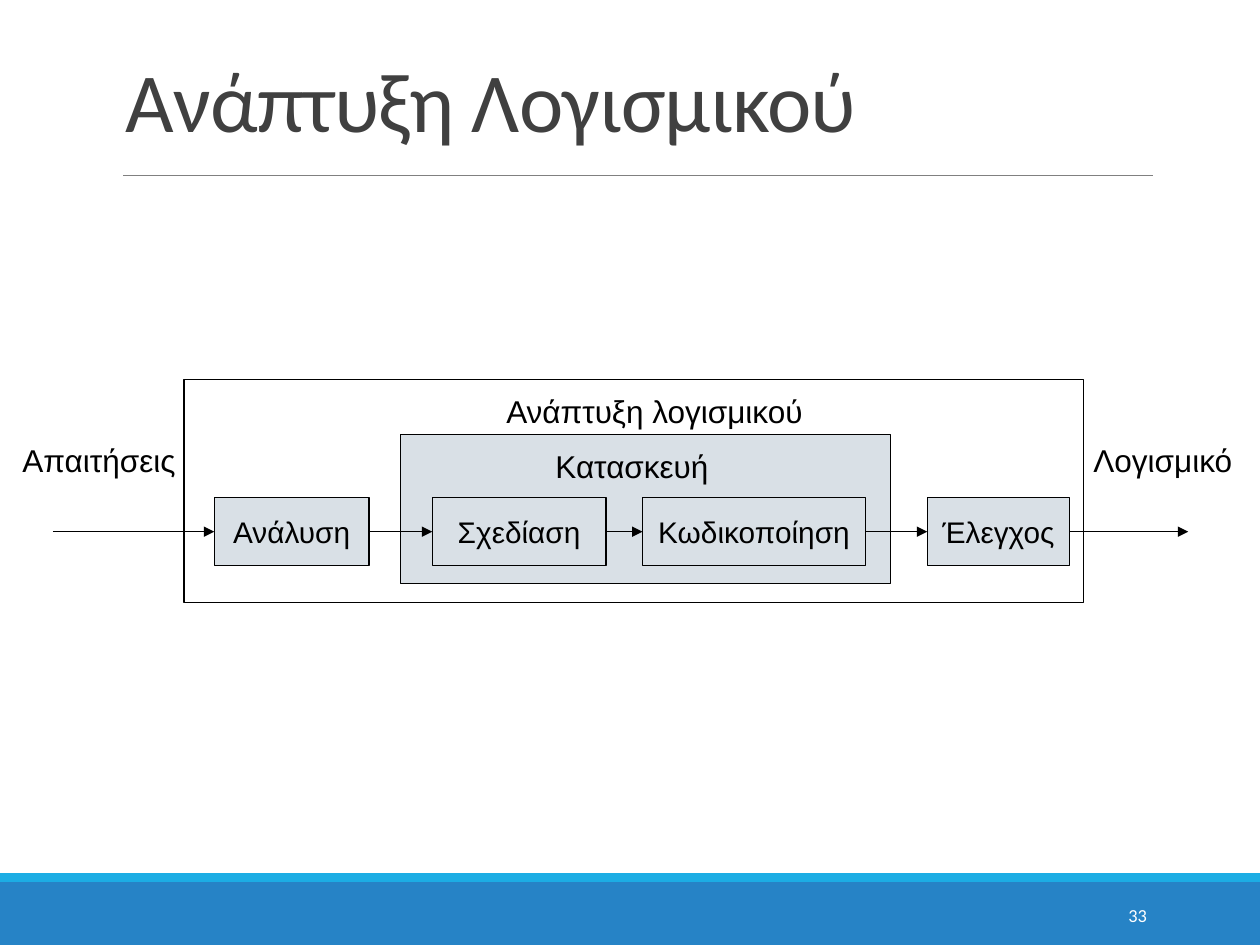
from lxml import etree
from pptx import Presentation
from pptx import util as u
from pptx.dml import color
from pptx.enum import shapes, text
from pptx.oxml import ns

HUES = {"band": "2683C6", "edge": "1CADE4", "rule": "808080", "title": "404040",
        "box": "D9E0E6", "ink": "000000", "page": "FFFFFF"}
STEPS = [("Ανάλυση", 1.7, 1.23), ("Σχεδίαση", 3.43, 1.38),
         ("Κωδικοποίηση", 5.1, 1.77), ("Έλεγχος", 7.36, 1.13)]
LABELS = [("Απαιτήσεις", 0.08, 3.45, 1.42), ("Ανάπτυξη λογισμικού", 3.92, 3.06, 2.56),
          ("Λογισμικό", 8.58, 3.45, 1.31), ("Κατασκευή", 4.31, 3.5, 1.42)]
TOP, TALL = 3.95, 0.54
MID = TOP + TALL / 2


def hue(name):
    """Return the named colour."""
    return color.RGBColor.from_string(HUES[name])


def style(item, values):
    """Set each attribute of item from values."""
    for key, value in values.items():
        setattr(item, key, value)


def write(shape, words, size, font="Arial", ink="ink", frame=None, para=None):
    """Write one formatted paragraph into a shape and return its run."""
    style(shape.text_frame, frame or {})
    line = shape.text_frame.paragraphs[0]
    style(line, para or {})
    run = line.add_run()
    run.text = words
    style(run.font, {"size": u.Pt(size), "name": font})
    run.font.color.rgb = hue(ink)
    return run


def rect(slide, place, fill=None, line=None):
    """Add a rectangle with an optional fill and outline."""
    shape = slide.shapes.add_shape(shapes.MSO_SHAPE.RECTANGLE, *map(u.Inches, place))
    shape.shadow.inherit = False
    if fill:
        shape.fill.solid()
        shape.fill.fore_color.rgb = hue(fill)
    else:
        shape.fill.background()
    if line:
        shape.line.color.rgb = hue(line)
        shape.line.width = u.Pt(0.75)
    else:
        shape.line.fill.background()
    return shape


def label(slide, place, words, size, **form):
    """Add a text box and return its run."""
    box = slide.shapes.add_textbox(*map(u.Inches, place))
    return write(box, words, size, **form)


def rule(slide, start, end, ink="ink", width=0.75):
    """Add a straight line without a shadow."""
    line = slide.shapes.add_connector(shapes.MSO_CONNECTOR.STRAIGHT,
                                      *map(u.Inches, (*start, *end)))
    line.line.color.rgb = hue(ink)
    line.line.width = u.Pt(width)
    etree.SubElement(line._element.spPr, ns.qn("a:effectLst"))
    return line


def arrow(slide, start, end, src=None, dest=None):
    """Add an arrow, joined to the boxes it leaves and meets."""
    line = rule(slide, start, end)
    etree.SubElement(line.line._get_or_add_ln(), ns.qn("a:tailEnd"), type="triangle")
    if src is not None:
        line.begin_connect(src, 3)
    if dest is not None:
        line.end_connect(dest, 1)


def frame(slide):
    """Add the title, its rule, the footer bands and the page number."""
    rect(slide, (0, 7, 10, 0.5), "band")
    rect(slide, (0, 6.93, 10, 0.07), "edge")
    rule(slide, (0.98, 1.39), (9.15, 1.39), "rule", 0.5)
    head = label(slide, (0.9, 0.31, 8.25, 0.93), "Ανάπτυξη Λογισμικού", 48,
                 font="Calibri", ink="title", para={"line_spacing": 0.85},
                 frame={"word_wrap": True, "vertical_anchor": text.MSO_ANCHOR.BOTTOM})
    head._r.get_or_add_rPr().set("spc", "-50")
    label(slide, (8.12, 7.06, 1.08, 0.4), "33", 10.5, font="Calibri", ink="page",
          para={"alignment": text.PP_ALIGN.RIGHT},
          frame={"word_wrap": True, "vertical_anchor": text.MSO_ANCHOR.MIDDLE})


def flow(slide):
    """Add the process boxes, their labels and the arrows between them."""
    rect(slide, (1.46, 3.01, 7.14, 1.77), line="ink")
    rect(slide, (3.18, 3.45, 3.89, 1.18), "box", "ink")
    boxes = []
    for words, left, wide in STEPS:
        box = rect(slide, (left, TOP, wide, TALL), "box", "ink")
        write(box, words, 17, para={"alignment": text.PP_ALIGN.CENTER},
              frame={"word_wrap": False, "vertical_anchor": text.MSO_ANCHOR.MIDDLE})
        boxes.append(box)
    for words, left, top, wide in LABELS:
        label(slide, (left, top, wide, 0.4), words, 18,
              frame={"word_wrap": False, "auto_size": text.MSO_AUTO_SIZE.SHAPE_TO_FIT_TEXT})
    for src, dest in zip([None, *boxes], [*boxes, None]):
        arrow(slide, (0.42, MID), (9.43, MID), src, dest)


def main():
    """Build and save the slide."""
    deck = Presentation()
    style(deck, {"slide_width": u.Inches(10), "slide_height": u.Inches(7.5)})
    slide = deck.slides.add_slide(deck.slide_layouts[6])
    frame(slide)
    flow(slide)
    deck.save("out.pptx")


if __name__ == "__main__":
    main()
